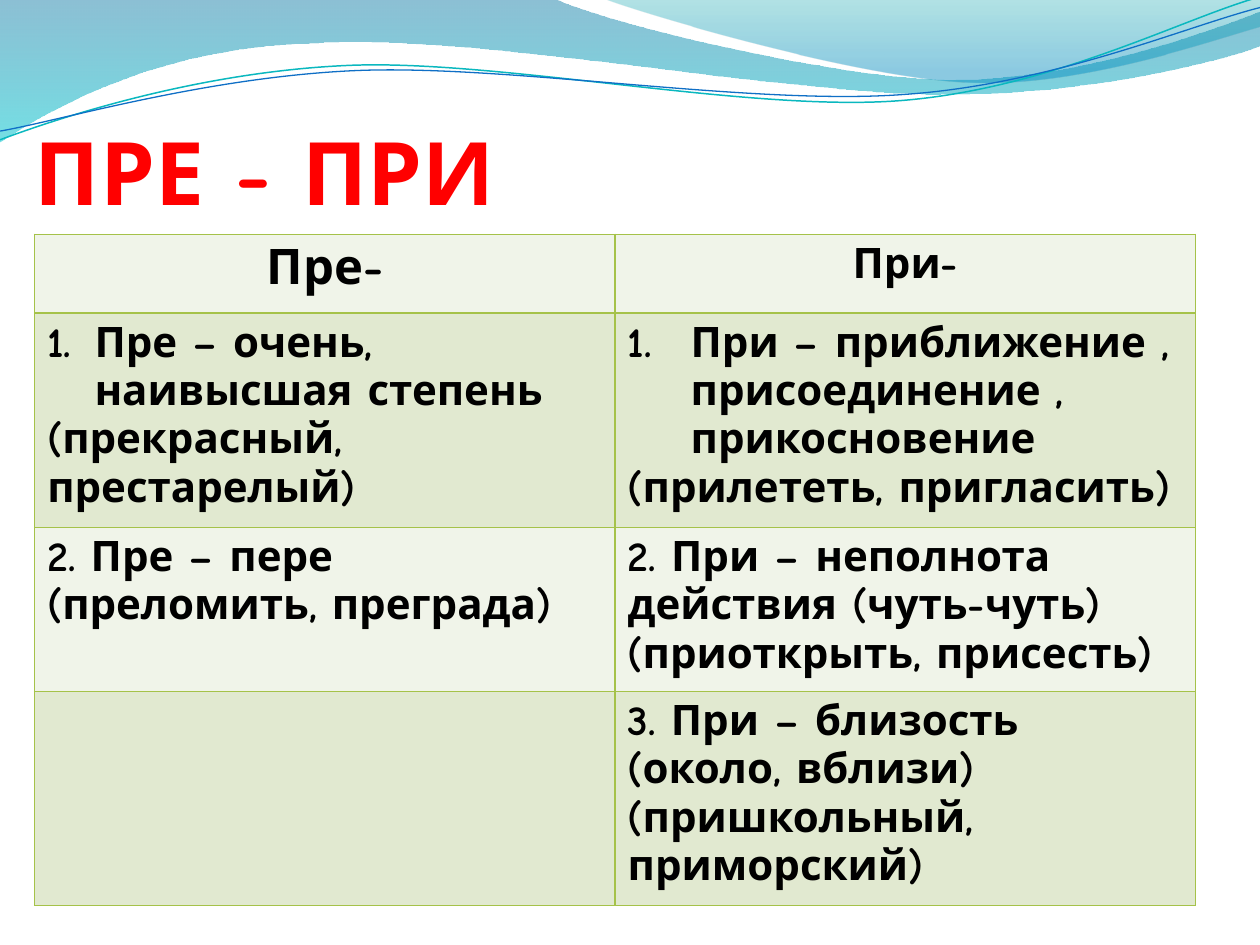
from pptx import Presentation
from pptx.dml.color import RGBColor
from pptx.enum.text import MSO_ANCHOR, PP_ALIGN
from pptx.oxml import parse_xml
from pptx.oxml.ns import nsdecls
from pptx.util import Pt

BOTTOM = MSO_ANCHOR.BOTTOM
LEFT, CENTER = PP_ALIGN.LEFT, PP_ALIGN.CENTER

COLORS = {
    "title": "FF0000", "text": "000000", "border": "A5C249",
    "light": "F0F4E9", "dark": "E1E9D0",
    "teal_line": "0AB8BF", "blue_line": "0F6FC6",
    "wave_top": "0074A1", "wave_bottom": "00C6CF",
    "crest_top": "00A1A9", "crest_bottom": "008BBF",
}

WAVE = [
    [(316.8, -0.7)],
    [(342.7, 12.2), (478.1, 45.4), (545.8, 45.4)],
    [(614.2, 45.4), (689.8, 18.7), (720, 6.5)],
    [(720.7, 25.9)],
    [(707.8, 31.7), (626.4, 54.7), (537.1, 54)],
    [(447.8, 54), (275, 20.2), (185, 24.5)],
    [(92.9, 25.9), (33.1, 59.8), (-0.7, 81.4)],
]
CREST = [
    [(366.5, 7.9), (491, 44.6), (553.7, 46.8)],
    [(616.3, 49.7), (691.9, 23), (720, 15.1)],
    [(720, 0)],
]
TEAL_CURVE = [
    [(34.6, 67), (113.8, 41), (199.4, 37.4)],
    [(284.4, 33.8), (427, 64.1), (513.4, 57.6)],
    [(599.8, 51.1), (675.4, 10.8), (718.6, -1.4)],
]
BLUE_CURVE = [
    [(33.8, 69.1), (118.1, 43.9), (203.8, 40.3)],
    [(290.2, 36.7), (429.8, 60.5), (516.2, 54)],
    [(601.9, 48.2), (677.5, 15.1), (720, 4.3)],
]

ROWS = [
    [[("Пре-", 28, CENTER, 0)], [("При-", 24, CENTER, 0)]],
    [[("Пре – очень, наивысшая степень", 24, LEFT, 27),
      ("(прекрасный, престарелый)", 24, LEFT, 0)],
     [("При – приближение , присоединение , прикосновение", 24, LEFT, 36),
      ("(прилететь, пригласить)", 24, LEFT, 0)]],
    [[("2. Пре – пере", 24, LEFT, 0), ("(преломить, преграда)", 24, LEFT, 0)],
     [("2. При – неполнота действия (чуть-чуть)", 24, LEFT, 0),
      ("(приоткрыть, присесть)", 24, LEFT, 0)]],
    [[],
     [("3. При – близость (около, вблизи)", 24, LEFT, 0),
      ("(пришкольный, приморский)", 24, LEFT, 0)]],
]
ROW_HEIGHTS = [45, 117.4, 91, 118.6]


def color(name):
    """Return the named colour."""
    return RGBColor.from_string(COLORS[name])


class SlideBuilder:
    """Holds the text style and the current slide."""

    def __init__(self, slide, font):
        self.slide = slide
        self.font = font

    def outline(self, start, segments, close):
        """Add a freeform of straight lines and cubic curves."""
        points = [(Pt(x), Pt(y)) for segment in segments for x, y in segment]
        builder = self.slide.shapes.build_freeform(Pt(start[0]), Pt(start[1]))
        builder.add_line_segments(points, close=close)
        shape = builder.convert_to_shape()
        shape.shadow.inherit = False
        lines = iter(shape._element.xpath(".//a:lnTo"))
        for segment in segments:
            pieces = [next(lines) for _ in segment]
            if len(pieces) == 3:
                cubic = parse_xml(f'<a:cubicBezTo {nsdecls("a")}/>')
                pieces[0].addprevious(cubic)
                for piece in pieces:
                    cubic.append(piece[0])
                    piece.getparent().remove(piece)
        return shape

    def wave(self, start, segments, stops):
        """Add a closed shape with a translucent vertical gradient."""
        shape = self.outline(start, segments, True)
        shape.line.fill.background()
        shape.fill.gradient()
        shape.fill.gradient_angle = 270
        for stop, (name, position, opacity) in zip(shape.fill.gradient_stops, stops):
            stop.color.rgb = color(name)
            stop.position = position
        for element, stop in zip(shape._element.xpath(".//a:gs/a:srgbClr"), stops):
            element.append(parse_xml(f'<a:alpha {nsdecls("a")} val="{stop[2] * 1000}"/>'))

    def curve(self, start, segments, name, width):
        """Add an open curved line."""
        shape = self.outline(start, segments, False)
        shape.fill.background()
        shape.line.color.rgb = color(name)
        shape.line.width = Pt(width)

    def run(self, paragraph, text, size, name):
        """Add one bold run to a paragraph."""
        run = paragraph.add_run()
        run.text = text
        run.font.name = self.font
        run.font.size = Pt(size)
        run.font.bold = True
        run.font.color.rgb = color(name)

    def title(self, text, left, top, width, height):
        """Add the title, anchored at the bottom of its box."""
        box = self.slide.shapes.add_textbox(Pt(left), Pt(top), Pt(width), Pt(height))
        frame = box.text_frame
        frame.word_wrap = True
        frame.vertical_anchor = BOTTOM
        frame.margin_left = frame.margin_right = frame.margin_bottom = 0
        self.run(frame.paragraphs[0], text, 50, "title")

    def cell(self, cell, paragraphs, fill):
        """Give a cell its borders, fill and paragraphs."""
        properties = cell._tc.get_or_add_tcPr()
        for side in "LRTB":
            properties.append(parse_xml(
                f'<a:ln{side} {nsdecls("a")} w="{Pt(1)}"><a:solidFill>'
                f'<a:srgbClr val="{COLORS["border"]}"/></a:solidFill></a:ln{side}>'))
        cell.fill.solid()
        cell.fill.fore_color.rgb = color(fill)
        frame = cell.text_frame
        for index, (text, size, alignment, indent) in enumerate(paragraphs):
            paragraph = frame.add_paragraph() if index else frame.paragraphs[0]
            paragraph.alignment = alignment
            if indent:
                settings = paragraph._p.get_or_add_pPr()
                settings.set("marL", str(Pt(indent)))
                settings.set("indent", str(-Pt(indent)))
                settings.append(parse_xml(
                    f'<a:buAutoNum {nsdecls("a")} type="arabicPeriod"/>'))
            self.run(paragraph, text, size, "text")

    def table(self, rows, heights, left, top, width):
        """Add the table with alternating row fills."""
        columns = len(rows[0])
        table = self.slide.shapes.add_table(
            len(rows), columns, Pt(left), Pt(top), Pt(width), Pt(sum(heights))).table
        for column in table.columns:
            column.width = Pt(width / columns)
        for index, (row, height) in enumerate(zip(rows, heights)):
            table.rows[index].height = Pt(height)
            for position, paragraphs in enumerate(row):
                self.cell(table.cell(index, position), paragraphs,
                          "dark" if index % 2 else "light")


def main():
    """Build and save the slide."""
    presentation = Presentation()
    presentation.slide_width, presentation.slide_height = Pt(720), Pt(540)
    slide = presentation.slides.add_slide(presentation.slide_layouts[6])
    builder = SlideBuilder(slide, "Comic Neue")
    builder.wave((0, 0), WAVE, [("wave_top", 0, 45), ("wave_bottom", 1, 55)])
    builder.wave((344.9, -0.7), CREST, [("crest_top", 0, 30), ("crest_bottom", 0.8, 45)])
    builder.curve((0, 79.9), TEAL_CURVE, "teal_line", 0.85)
    builder.curve((0, 74.9), BLUE_CURVE, "blue_line", 0.75)
    builder.title("ПРЕ - ПРИ", 20, 37.4, 654, 90)
    builder.table(ROWS, ROW_HEIGHTS, 19.8, 134, 663.4)
    presentation.save("out.pptx")


if __name__ == "__main__":
    main()
